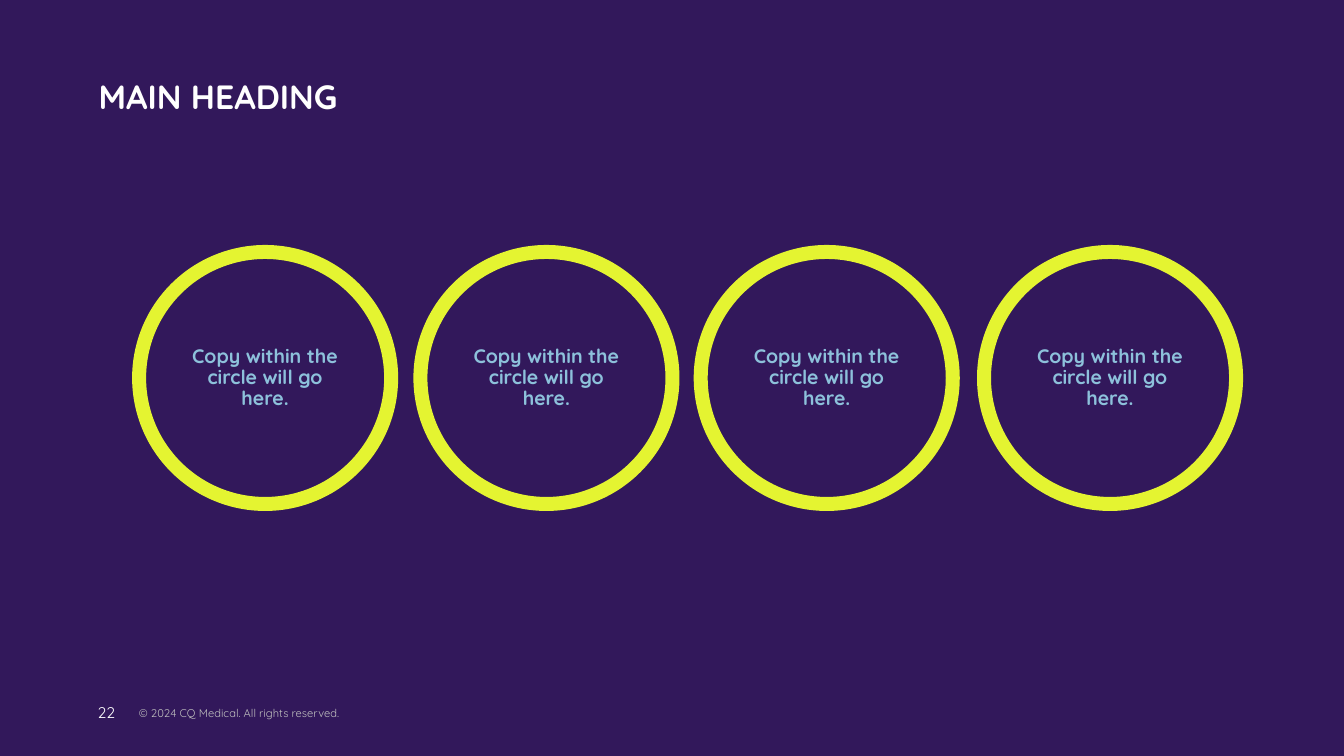
from pptx import Presentation
from pptx.dml.color import RGBColor
from pptx.enum.shapes import MSO_SHAPE
from pptx.enum.text import MSO_ANCHOR, PP_ALIGN
from pptx.util import Inches, Pt

OVAL = MSO_SHAPE.OVAL
TOP, MIDDLE = MSO_ANCHOR.TOP, MSO_ANCHOR.MIDDLE
LEFT, CENTER = PP_ALIGN.LEFT, PP_ALIGN.CENTER

PURPLE = RGBColor(0x32, 0x18, 0x5B)
LIME = RGBColor(0xE4, 0xF4, 0x31)
BLUE = RGBColor(0x8D, 0xC1, 0xDB)
WHITE = RGBColor(0xFF, 0xFF, 0xFF)
GREY = RGBColor(0xBF, 0xBF, 0xBF)


class Deck:
    font = "Quicksand"

    def __init__(self):
        self.prs = Presentation()
        self.prs.slide_width = Inches(13.33)
        self.prs.slide_height = Inches(7.5)
        self.slide = self.prs.slides.add_slide(self.prs.slide_layouts[6])
        fill = self.slide.background.fill
        fill.solid()
        fill.fore_color.rgb = PURPLE

    def set_text(self, shape, text, size, color, bold, align=LEFT, anchor=TOP):
        """Set the text of a shape as one styled run and return its paragraph."""
        frame = shape.text_frame
        frame.word_wrap = True
        frame.vertical_anchor = anchor
        para = frame.paragraphs[0]
        para.alignment = align
        run = para.add_run()
        run.text = text
        run.font.name = self.font
        run.font.size = Pt(size)
        run.font.bold = bold
        run.font.color.rgb = color
        return para

    def label(self, box, text, size, color, bold=False):
        shape = self.slide.shapes.add_textbox(*map(Inches, box))
        self.set_text(shape, text, size, color, bold)

    def ring(self, left, top, size, text):
        box = map(Inches, (left, top, size, size))
        shape = self.slide.shapes.add_shape(OVAL, *box)
        shape.shadow.inherit = False
        shape.fill.background()
        shape.line.color.rgb = LIME
        shape.line.width = Pt(10)
        para = self.set_text(shape, text, 14, BLUE, True, CENTER, MIDDLE)
        para.line_spacing = 0.9


def main():
    deck = Deck()
    deck.label((1.28, 6.96, 8.87, 0.57),
               "© 2024 CQ Medical. All rights reserved.", 8, GREY)
    deck.label((0.88, 0.7, 10.64, 1.27), "MAIN HEADING", 24, WHITE, True)
    deck.label((0.87, 6.93, 0.67, 0.4), "22", 11, WHITE)
    for left in (1.38, 4.17, 6.95, 9.76):
        deck.ring(left, 2.5, 2.5, "Copy within the circle will go here.")
    deck.prs.save("out.pptx")


if __name__ == "__main__":
    main()
